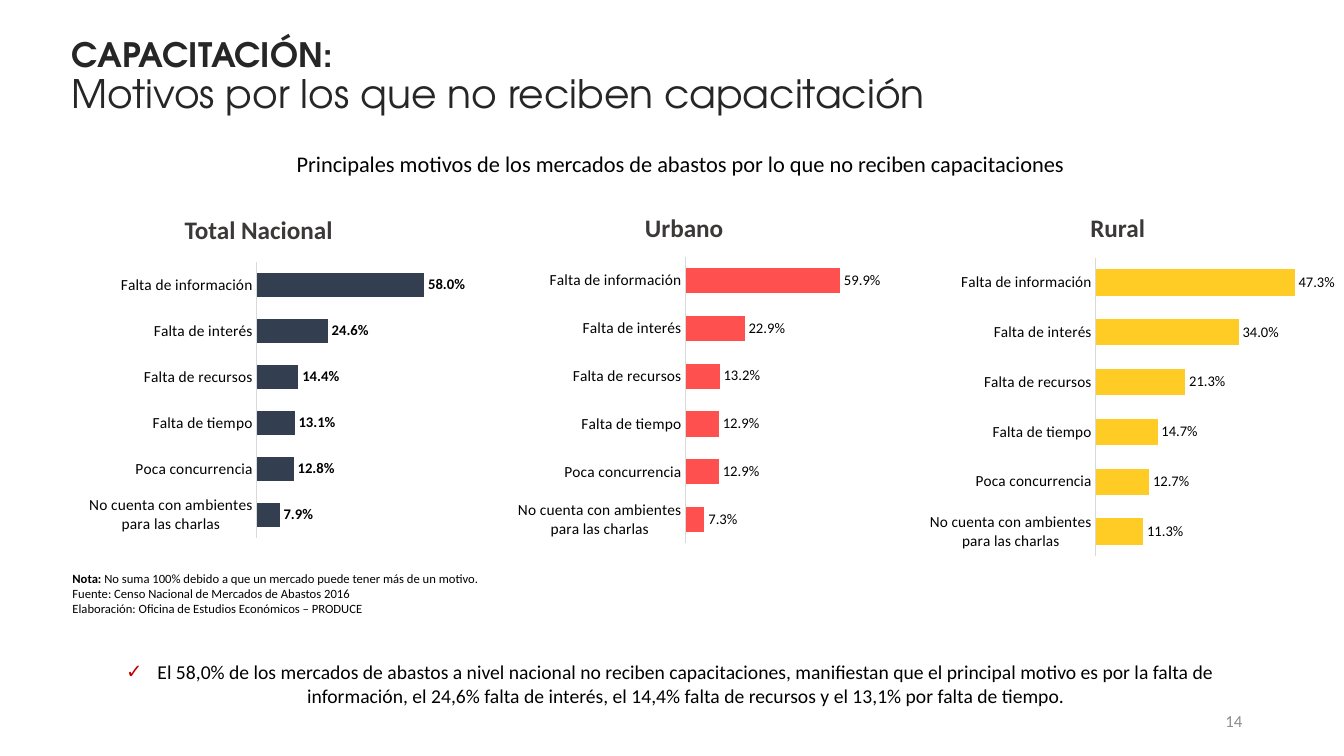
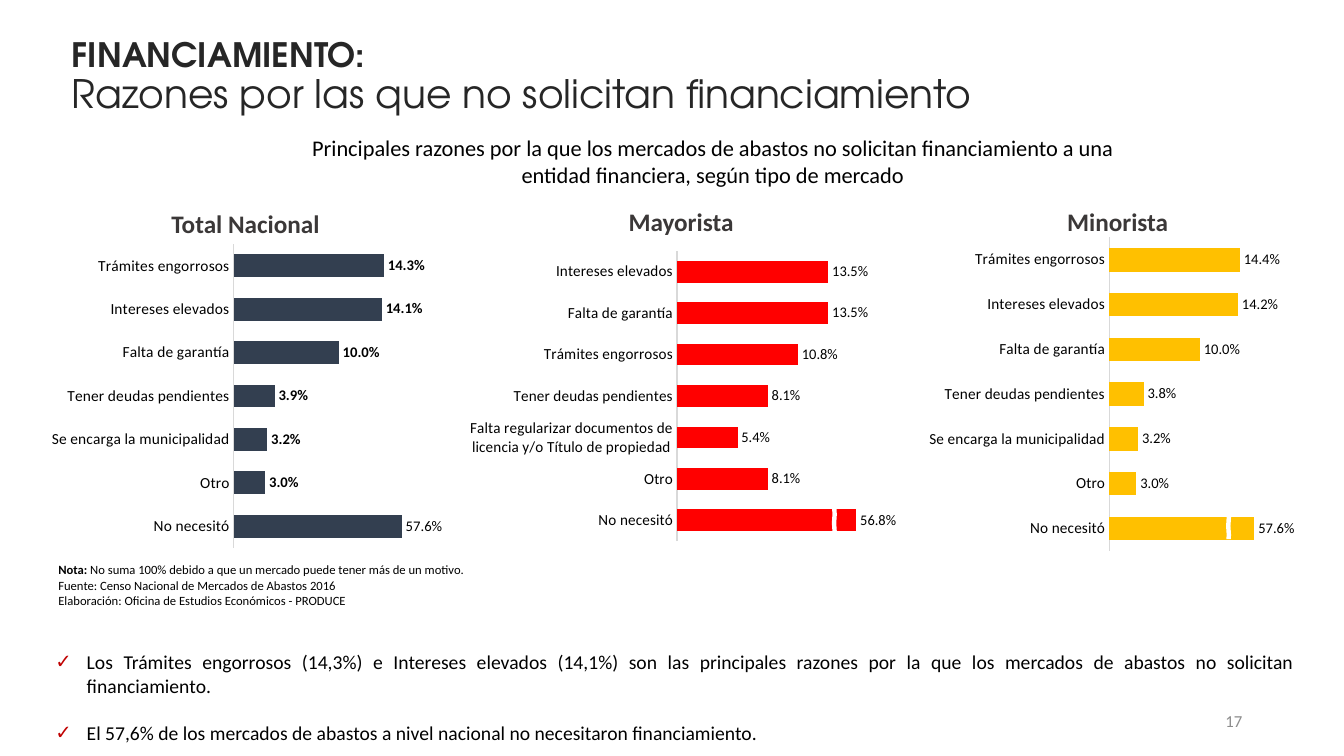
"""Build two slides on why markets skip training and financing."""
from dataclasses import dataclass, field

from pptx import Presentation
from pptx.chart.data import CategoryChartData
from pptx.dml.color import RGBColor
from pptx.enum.chart import XL_CHART_TYPE as ChartType
from pptx.enum.chart import XL_LABEL_POSITION as LabelPosition
from pptx.enum.chart import XL_TICK_MARK as TickMark
from pptx.enum.shapes import MSO_SHAPE as Preset
from pptx.enum.text import MSO_ANCHOR as Anchor
from pptx.enum.text import MSO_AUTO_SIZE as AutoSize
from pptx.enum.text import PP_ALIGN as Align
from pptx.oxml import parse_xml
from pptx.oxml.ns import nsdecls
from pptx.util import Emu, Pt

EMU_PER_PX = 9144
SLIDE_SIZE = (1333, 750)
TITLE_BOX = (61, 25, 1244, 105)
NUMBER_BOX = (942, 695, 300, 40)
HEADING_SIZE = (249, 40)
NOTE_SIZE = (621, 56)
WAVE_SIZE = (35, 5)
BULLET_INDENT = 31
BODY_FONT = "Calibri"
TITLE_FONT = "TeX Gyre Adventor"
BLACK, WHITE, NAVY = "000000", "FFFFFF", "333F50"
TITLE_INK, HEADING_INK, NUMBER_INK = "262626", "3B3838", "8C8C8C"
AXIS_GREY, CHECK_RED = "D9D9D9", "C00000"
PERCENT = "0.0%"

Box = tuple[int, int, int, int]


@dataclass(frozen=True)
class TextStyle:
    size: float
    color: str = BLACK
    bold: bool | None = None
    align: Align = Align.LEFT
    font: str = BODY_FONT


@dataclass(frozen=True)
class BarPanel:
    heading: str
    heading_at: tuple[int, int]
    box: Box
    plot: tuple[float, float, float, float]
    categories: list[str]
    values: list[float]
    maximum: float
    color: str
    bold: bool = False
    last_label: str = ""


@dataclass(frozen=True)
class SlideContent:
    topic: str
    title: str
    number: str
    subtitle: str
    subtitle_box: Box
    panels: list[BarPanel]
    note_at: tuple[int, int]
    author: str
    bullets: list[str]
    bullet_box: Box
    bullet_align: Align
    waves: list[tuple[int, int]] = field(default_factory=list)


SUBTITLE = TextStyle(16, align=Align.CENTER)
HEADING = TextStyle(18, HEADING_INK, True, Align.CENTER)
NOTE = TextStyle(9)
NUMBER = TextStyle(12, NUMBER_INK, align=Align.RIGHT)
TITLE = TextStyle(28, TITLE_INK, font=TITLE_FONT)

TRAINING = [
    "Falta de información", "Falta de interés", "Falta de recursos", "Falta de tiempo",
    "Poca concurrencia", "No cuenta con ambientes para las charlas",
]
FINANCING = [
    "Trámites engorrosos", "Intereses elevados", "Falta de garantía", "Tener deudas pendientes",
    "Se encarga la municipalidad", "Otro", "No necesitó",
]
WHOLESALE = [
    "Intereses elevados", "Falta de garantía", "Trámites engorrosos", "Tener deudas pendientes",
    "Falta regularizar documentos de licencia y/o Título de propiedad", "Otro", "No necesitó",
]

SLIDES = [
    SlideContent(
        "CAPACITACIÓN:", "Motivos por los que no reciben capacitación", "14",
        "Principales motivos de los mercados de abastos por lo que no reciben capacitaciones",
        (263, 144, 824, 37),
        [
            BarPanel("Total Nacional", (132, 208), (70, 245, 393, 304), (0.47, 0.05, 0.51, 0.9),
                     TRAINING, [0.58, 0.246, 0.144, 0.131, 0.128, 0.079], 0.7, NAVY, True),
            BarPanel("Urbano", (554, 206), (501, 239, 373, 316), (0.48, 0.05, 0.48, 0.9),
                     TRAINING, [0.599, 0.229, 0.132, 0.129, 0.129, 0.073], 0.7, "FF5050"),
            BarPanel("Rural", (984, 206), (911, 239, 413, 333), (0.43, 0.05, 0.51, 0.89),
                     TRAINING, [0.473, 0.34, 0.213, 0.147, 0.127, 0.113], 0.5, "FFCB25"),
        ],
        (62, 561), "Elaboración: Oficina de Estudios Económicos – PRODUCE",
        ["El 58,0% de los mercados de abastos a nivel nacional no reciben capacitaciones, "
         "manifiestan que el principal motivo es por la falta de información, el 24,6% falta de "
         "interés, el 14,4% falta de recursos y el 13,1% por falta de tiempo."],
        (97, 650, 1136, 57), Align.CENTER,
    ),
    SlideContent(
        "FINANCIAMIENTO:", "Razones por las que no solicitan financiamiento", "17",
        "Principales razones por la que los mercados de abastos no solicitan financiamiento a una "
        "entidad financiera, según tipo de mercado",
        (286, 128, 842, 64),
        [
            BarPanel("Total Nacional", (119, 202), (48, 236, 391, 314), (0.47, 0.02, 0.48, 0.96),
                     FINANCING, [0.143, 0.141, 0.1, 0.039, 0.032, 0.03, 0.16], 0.18, NAVY, True,
                     "57.6%"),
            BarPanel("Mayorista", (551, 200), (453, 233, 436, 320), (0.51, 0.05, 0.48, 0.9),
                     WHOLESALE, [0.135, 0.135, 0.108, 0.081, 0.054, 0.081, 0.16], 0.185, "FF0000",
                     last_label="56.8%"),
            BarPanel("Minorista", (984, 200), (920, 229, 364, 324), (0.5, 0.02, 0.45, 0.96),
                     FINANCING, [0.144, 0.142, 0.1, 0.038, 0.032, 0.03, 0.16], 0.18, "FFC000",
                     last_label="57.6%"),
        ],
        (48, 553), "Elaboración: Oficina de Estudios Económicos - PRODUCE",
        ["Los Trámites engorrosos (14,3%) e Intereses elevados (14,1%) son las principales razones "
         "por la que los mercados de abastos no solicitan financiamiento.",
         "El 57,6% de los mercados de abastos a nivel nacional no necesitaron financiamiento."],
        (45, 640, 1249, 81), Align.JUSTIFY, [(810, 512), (1201, 515)],
    ),
]


def px(length: int) -> Emu:
    """Turn px into EMU."""
    return Emu(length * EMU_PER_PX)


def rgb(color: str) -> RGBColor:
    """Turn a hex string into a colour."""
    return RGBColor.from_string(color)


def place(shape, box: Box) -> None:
    """Move and size a shape."""
    shape.left, shape.top, shape.width, shape.height = map(px, box)


def style_font(font, style: TextStyle) -> None:
    """Apply a text style to a font."""
    font.name, font.size, font.bold = style.font, Pt(style.size), style.bold
    font.color.rgb = rgb(style.color)


def style_paragraph(paragraph, style: TextStyle) -> None:
    """Apply a text style to a paragraph."""
    paragraph.alignment = style.align
    style_font(paragraph.font, style)


def add_bullet(paragraph) -> None:
    """Give a paragraph a red check mark and a hanging indent."""
    properties = paragraph._p.get_or_add_pPr()
    properties.set("marL", str(px(BULLET_INDENT)))
    properties.set("indent", str(-px(BULLET_INDENT)))
    for xml in (f'<a:buClr {nsdecls("a")}><a:srgbClr val="{CHECK_RED}"/></a:buClr>',
                f'<a:buChar {nsdecls("a")} char="✓"/>'):
        properties.append(parse_xml(xml))


def add_text(slide, box: Box, lines: list[str], style: TextStyle):
    """Add a wrapping text box with one paragraph per line."""
    frame = slide.shapes.add_textbox(*map(px, box)).text_frame
    frame.word_wrap = True
    frame.text = "\n".join(lines)
    for paragraph in frame.paragraphs:
        style_paragraph(paragraph, style)
    return frame


def fill_title(slide, content: SlideContent) -> None:
    """Write the bold topic and the light title below it."""
    shape = slide.shapes.title
    place(shape, TITLE_BOX)
    frame = shape.text_frame
    frame.auto_size, frame.vertical_anchor = AutoSize.NONE, Anchor.MIDDLE
    paragraph = frame.paragraphs[0]
    paragraph.line_spacing = 0.9
    style_paragraph(paragraph, TITLE)
    topic = paragraph.add_run()
    topic.text = content.topic
    topic.font.size, topic.font.bold = Pt(24), True
    paragraph.add_line_break()
    title = paragraph.add_run()
    title.text = content.title


def fill_bullets(slide, content: SlideContent) -> None:
    """Write the conclusions into the body placeholder."""
    shape = slide.placeholders[1]
    place(shape, content.bullet_box)
    frame = shape.text_frame
    frame.auto_size = AutoSize.NONE
    frame.text = "\n".join(content.bullets)
    for index, paragraph in enumerate(frame.paragraphs):
        add_bullet(paragraph)
        paragraph.space_before = Pt(17 if index else 0)
        style_paragraph(paragraph, TextStyle(14, align=content.bullet_align))


def set_plot_layout(chart, plot: tuple[float, float, float, float]) -> None:
    """Fix the inner plot area as fractions of the chart."""
    area = chart.element.chart.plotArea
    for layout in area.xpath("c:layout"):
        area.remove(layout)
    sizes = "".join(f'<c:{name} val="{value}"/>' for name, value in zip("xywh", plot))
    area.insert(0, parse_xml(
        f'<c:layout {nsdecls("c")}><c:manualLayout><c:layoutTarget val="inner"/>'
        f'<c:xMode val="edge"/><c:yMode val="edge"/>{sizes}</c:manualLayout></c:layout>'))


def add_panel(slide, panel: BarPanel) -> None:
    """Draw a headed bar chart."""
    data = CategoryChartData(number_format=PERCENT)
    data.categories = panel.categories
    data.add_series("Series 1", panel.values)
    chart = slide.shapes.add_chart(ChartType.BAR_CLUSTERED, *map(px, panel.box), data).chart
    chart.has_title = chart.has_legend = False
    style_font(chart.font, TextStyle(10))
    set_plot_layout(chart, panel.plot)

    category_axis, value_axis = chart.category_axis, chart.value_axis
    category_axis.reverse_order = True
    category_axis.major_tick_mark = category_axis.minor_tick_mark = TickMark.NONE
    category_axis.format.line.color.rgb = rgb(AXIS_GREY)
    category_axis.format.line.width = Pt(0.75)
    style_font(category_axis.tick_labels.font, TextStyle(11))
    value_axis.minimum_scale, value_axis.maximum_scale = 0, panel.maximum
    value_axis.has_major_gridlines = value_axis.visible = False

    plot = chart.plots[0]
    plot.gap_width, plot.vary_by_categories = 90, False
    series = plot.series[0]
    series.format.fill.solid()
    series.format.fill.fore_color.rgb = rgb(panel.color)
    labels = series.data_labels
    labels.show_value, labels.position = True, LabelPosition.OUTSIDE_END
    labels.number_format, labels.number_format_is_linked = PERCENT, False
    style_font(labels.font, TextStyle(10.5, bold=panel.bold))
    if panel.last_label:
        label = series.points[len(panel.values) - 1].data_label
        label.text_frame.text = panel.last_label
        style_font(label.text_frame.paragraphs[0].runs[0].font, TextStyle(10.5, bold=False))
        label.position = LabelPosition.OUTSIDE_END
    add_text(slide, (*panel.heading_at, *HEADING_SIZE), [panel.heading], HEADING)


def add_wave(slide, position: tuple[int, int]) -> None:
    """Cut a shortened bar with a white upright wave."""
    wave = slide.shapes.add_shape(Preset.DOUBLE_WAVE, *map(px, (*position, *WAVE_SIZE)))
    wave.rotation = 270
    wave.element.spPr.xfrm.set("flipV", "1")
    wave.shadow.inherit = False
    wave.fill.solid()
    wave.fill.fore_color.rgb = rgb(WHITE)
    wave.line.fill.background()


def add_note(slide, content: SlideContent) -> None:
    """Add the note, source and author lines."""
    lines = ["", "Fuente: Censo Nacional de Mercados de Abastos 2016", content.author]
    paragraph = add_text(slide, (*content.note_at, *NOTE_SIZE), lines, NOTE).paragraphs[0]
    lead, rest = paragraph.add_run(), paragraph.add_run()
    lead.text, lead.font.bold = "Nota:", True
    rest.text = " No suma 100% debido a que un mercado puede tener más de un motivo."


def build_slide(presentation, content: SlideContent) -> None:
    """Build one slide from its content."""
    slide = presentation.slides.add_slide(presentation.slide_layouts[1])
    fill_title(slide, content)
    fill_bullets(slide, content)
    add_text(slide, content.subtitle_box, [content.subtitle], SUBTITLE)
    for panel in content.panels:
        add_panel(slide, panel)
    for position in content.waves:
        add_wave(slide, position)
    add_note(slide, content)
    add_text(slide, NUMBER_BOX, [content.number], NUMBER).vertical_anchor = Anchor.MIDDLE


def main() -> None:
    """Build and save the presentation."""
    presentation = Presentation()
    presentation.slide_width, presentation.slide_height = map(px, SLIDE_SIZE)
    for content in SLIDES:
        build_slide(presentation, content)
    presentation.save("out.pptx")


if __name__ == "__main__":
    main()
